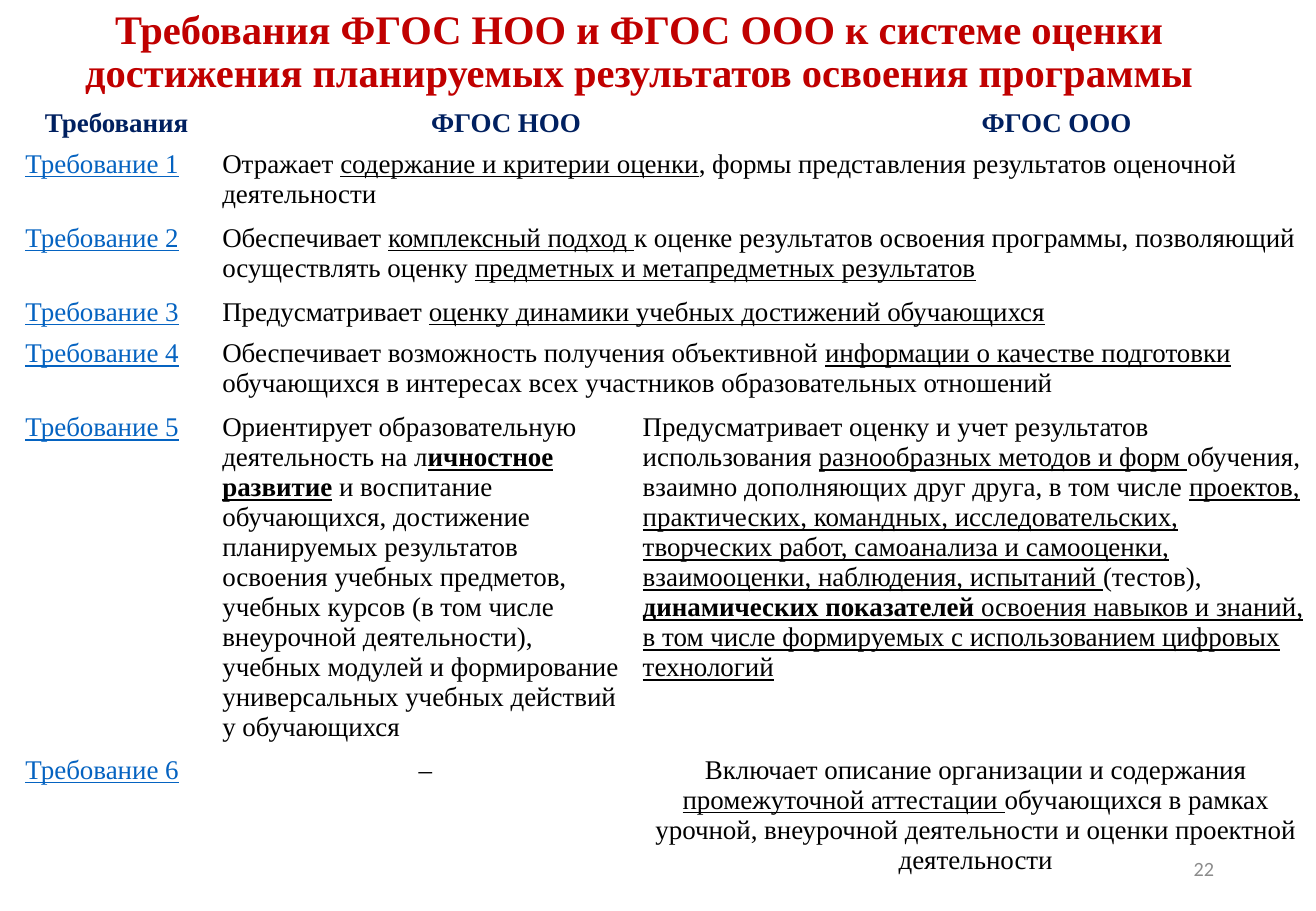
from dataclasses import dataclass

from pptx import Presentation
from pptx.dml.color import RGBColor
from pptx.enum.text import MSO_ANCHOR, MSO_AUTO_SIZE, PP_ALIGN
from pptx.text.text import TextFrame, _Paragraph
from pptx.util import Pt

SERIF = "Times New Roman"
RED, NAVY, BLUE, BLACK, GREY = "C00000", "002060", "0563C1", "000000", "8C8C8C"
TITLE = "Требования ФГОС НОО и ФГОС ООО к системе оценки достижения планируемых результатов освоения программы"
COLUMN_WIDTHS = (116.64, 249.12, 95.76, 307.44)
ROW_HEIGHTS = (24.48, 43.92, 43.92, 24.48, 43.92, 203.04, 87.12)
TITLE_FRAME = {"auto_size": MSO_AUTO_SIZE.NONE, "word_wrap": True, "vertical_anchor": MSO_ANCHOR.MIDDLE}
CELL_MARGINS = {"margin_left": Pt(4.32), "margin_right": Pt(4.32),
                "margin_top": Pt(2.16), "margin_bottom": Pt(2.16)}


@dataclass(frozen=True)
class Phrase:
    text: str
    color: str = BLACK
    bold: bool = False
    underline: bool = False
    size: float = 16
    font: str = SERIF


@dataclass(frozen=True)
class Entry:
    column: int
    phrases: tuple[Phrase, ...]
    span: int = 1
    alignment: PP_ALIGN = PP_ALIGN.LEFT


def key(text: str) -> Phrase:
    return Phrase(text, underline=True)


def strong(text: str) -> Phrase:
    return Phrase(text, bold=True, underline=True)


def heading(column: int, text: str, span: int = 1) -> Entry:
    return Entry(column, (Phrase(text, NAVY, bold=True),), span, PP_ALIGN.CENTER)


def requirement(number: int, *entries: Entry) -> tuple[Entry, ...]:
    return (Entry(0, (Phrase(f"Требование {number}", BLUE, underline=True),)), *entries)


def shared(*phrases: Phrase) -> Entry:
    return Entry(1, phrases, span=3)


ROWS = (
    (heading(0, "Требования"), heading(1, "ФГОС НОО", span=2), heading(3, "ФГОС ООО")),
    requirement(1, shared(
        Phrase("Отражает "),
        key("содержание и критерии оценки"),
        Phrase(", формы представления результатов оценочной деятельности"))),
    requirement(2, shared(
        Phrase("Обеспечивает "),
        key("комплексный подход "),
        Phrase("к оценке результатов освоения программы, позволяющий осуществлять оценку "),
        key("предметных и метапредметных результатов"))),
    requirement(3, shared(
        Phrase("Предусматривает "),
        key("оценку динамики учебных достижений обучающихся"))),
    requirement(4, shared(
        Phrase("Обеспечивает возможность получения объективной "),
        key("информации о качестве подготовки "),
        Phrase("обучающихся в интересах всех участников образовательных отношений"))),
    requirement(
        5,
        Entry(1, (
            Phrase("Ориентирует образовательную деятельность на л"),
            strong("ичностное развитие"),
            Phrase(" и воспитание обучающихся, достижение планируемых результатов освоения "
                   "учебных предметов, учебных курсов (в том числе внеурочной деятельности), "
                   "учебных модулей и формирование универсальных учебных действий у обучающихся"))),
        Entry(2, (
            Phrase("Предусматривает оценку и учет результатов использования "),
            key("разнообразных методов и форм "),
            Phrase("обучения, взаимно дополняющих друг друга, в том числе "),
            key("проектов, практических, командных, исследовательских, творческих работ, "
                "самоанализа и самооценки, взаимооценки, наблюдения, испытаний "),
            Phrase("(тестов), "),
            strong("динамических показателей "),
            key("освоения навыков и знаний, в том числе формируемых с использованием "
                "цифровых технологий")), span=2)),
    requirement(
        6,
        Entry(1, (Phrase("–"),), alignment=PP_ALIGN.CENTER),
        Entry(2, (
            Phrase("Включает описание организации и содержания "),
            key("промежуточной аттестации "),
            Phrase("обучающихся в рамках урочной, внеурочной деятельности и оценки "
                   "проектной деятельности")), span=2, alignment=PP_ALIGN.CENTER)),
)


def apply(target: object, formats: dict[str, object]) -> None:
    for attribute, value in formats.items():
        setattr(target, attribute, value)


def rgb(color: str) -> RGBColor:
    return RGBColor.from_string(color)


def write(frame: TextFrame, phrases: tuple[Phrase, ...], alignment: PP_ALIGN) -> _Paragraph:
    paragraph = frame.paragraphs[0]
    paragraph.alignment = alignment
    for phrase in phrases:
        run = paragraph.add_run()
        run.text = phrase.text
        apply(run.font, {"name": phrase.font, "size": Pt(phrase.size),
                         "bold": phrase.bold, "underline": phrase.underline})
        run.font.color.rgb = rgb(phrase.color)
    return paragraph


def main() -> None:
    presentation = Presentation()
    apply(presentation, {"slide_width": Pt(779.76), "slide_height": Pt(540)})
    slide = presentation.slides.add_slide(presentation.slide_layouts[5])

    title = slide.shapes.title
    apply(title, {"left": Pt(0), "top": Pt(0), "width": Pt(757.44), "height": Pt(62.64)})
    apply(title.text_frame, TITLE_FRAME)
    headline = write(title.text_frame, (Phrase(TITLE, RED, bold=True, size=24),), PP_ALIGN.CENTER)
    headline.line_spacing = 0.9

    requirements = slide.shapes.add_table(
        len(ROW_HEIGHTS), len(COLUMN_WIDTHS), Pt(10.8), Pt(61.92),
        Pt(sum(COLUMN_WIDTHS)), Pt(sum(ROW_HEIGHTS))).table
    apply(requirements, {"first_row": False, "horz_banding": False})
    for column, width in zip(requirements.columns, COLUMN_WIDTHS):
        column.width = Pt(width)
    for row, height in zip(requirements.rows, ROW_HEIGHTS):
        row.height = Pt(height)
    for cell in requirements.iter_cells():
        cell.fill.background()
        apply(cell, CELL_MARGINS)
    for index, entries in enumerate(ROWS):
        for entry in entries:
            cell = requirements.cell(index, entry.column)
            if entry.span > 1:
                cell.merge(requirements.cell(index, entry.column + entry.span - 1))
            write(cell.text_frame, entry.phrases, entry.alignment)

    page_number = slide.shapes.add_textbox(Pt(550.8), Pt(500.4), Pt(175.68), Pt(28.8)).text_frame
    apply(page_number, TITLE_FRAME)
    write(page_number, (Phrase("22", GREY, size=12, font="Calibri"),), PP_ALIGN.RIGHT)

    presentation.save("out.pptx")


if __name__ == "__main__":
    main()
